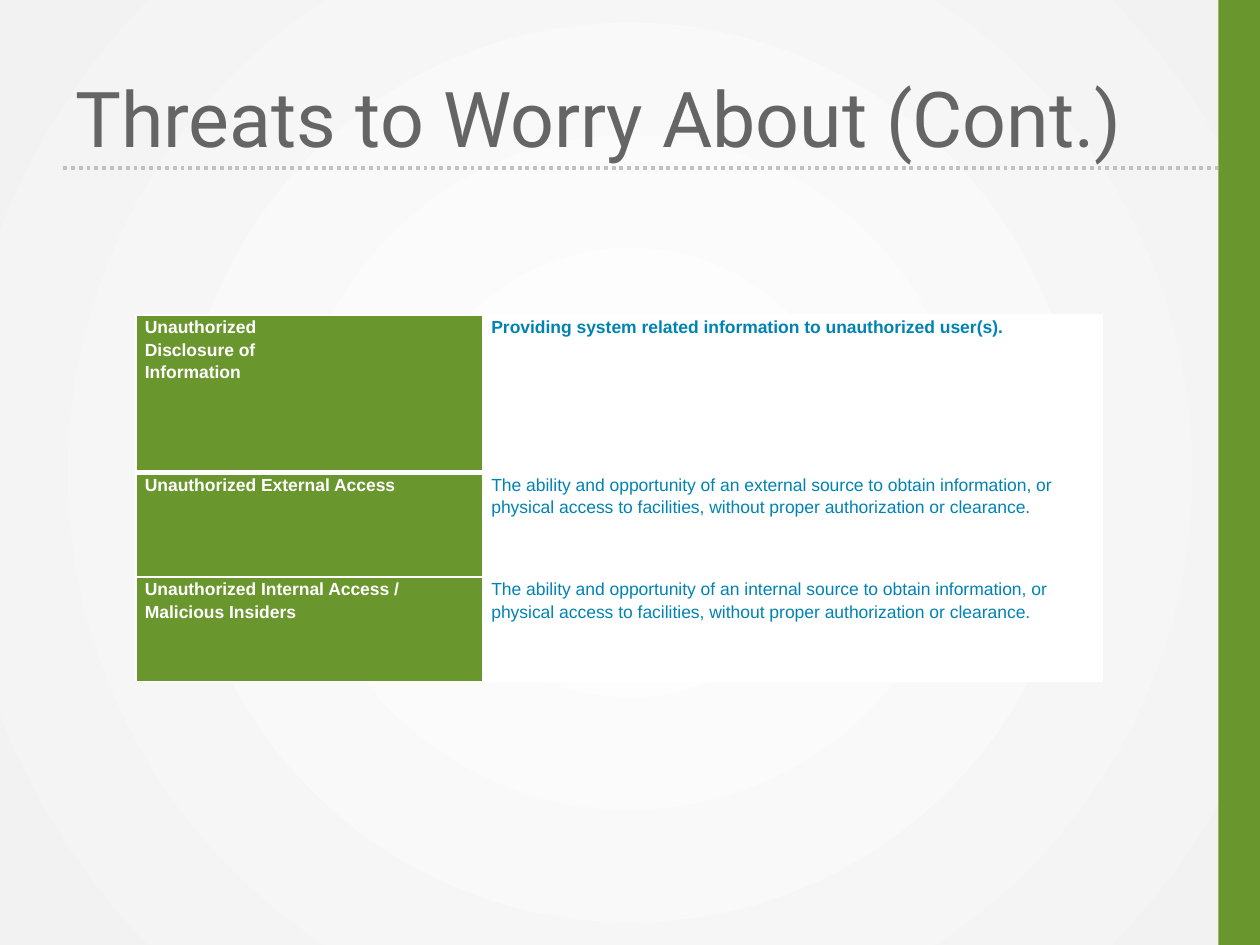
from lxml.etree import SubElement
from pptx import Presentation
from pptx.dml.color import RGBColor
from pptx.enum.dml import MSO_LINE
from pptx.enum.shapes import MSO_CONNECTOR, MSO_SHAPE
from pptx.enum.text import MSO_ANCHOR
from pptx.oxml.ns import qn
from pptx.util import Inches, Pt

COLORS = {
    "green": "6A972D",
    "blue": "0083B3",
    "white": "FFFFFF",
    "edge": "F2F2F2",
    "title": "656565",
    "rule": "C1C1C1",
}
COL_WIDTHS = [2.75, 4.92]
ROW_HEIGHTS = [1.25, 0.83, 0.83]
ACCESS = ("The ability and opportunity of an {} source to obtain information, or "
          "physical access to facilities, without proper authorization or clearance.")
THREATS = [
    ("Unauthorized\nDisclosure of\nInformation",
     "Providing system related information to unauthorized user(s)."),
    ("Unauthorized External Access", ACCESS.format("external")),
    ("Unauthorized Internal Access / Malicious Insiders", ACCESS.format("internal")),
]


def rgb(name):
    return RGBColor.from_string(COLORS[name])


def write(tf, text, color, line_spacing=None, **font):
    """Fill a text frame, one paragraph for each line of text."""
    tf.word_wrap = True
    for i, line in enumerate(text.split("\n")):
        p = tf.paragraphs[0] if i == 0 else tf.add_paragraph()
        p.line_spacing = line_spacing
        r = p.add_run()
        r.text = line
        r.font.color.rgb = rgb(color)
        for name, value in font.items():
            setattr(r.font, name, value)


def set_background(s):
    """Radial gradient, white in the middle."""
    fill = s.background.fill
    fill.gradient()
    for stop, color in zip(fill.gradient_stops, ("white", "edge")):
        stop.color.rgb = rgb(color)
    grad = s.element.find(".//" + qn("a:gradFill"))
    grad.remove(grad.find(qn("a:lin")))
    circle = SubElement(grad, qn("a:path"), path="circle")
    SubElement(circle, qn("a:fillToRect"), {side: "50000" for side in "ltrb"})


def add_rule(s):
    line = s.shapes.add_connector(MSO_CONNECTOR.STRAIGHT, Inches(0.5), Inches(1.33),
                                  Inches(9.67), Inches(1.33))
    line.line.color.rgb = rgb("rule")
    line.line.width = Pt(2.25)
    line.line.dash_style = MSO_LINE.ROUND_DOT
    SubElement(line._element.spPr, qn("a:effectLst"))


def add_side_bar(s):
    sp = s.shapes.add_shape(MSO_SHAPE.RECTANGLE, Inches(9.67), 0, Inches(0.33), Inches(7.5))
    sp.shadow.inherit = False
    sp.fill.solid()
    sp.fill.fore_color.rgb = rgb("green")
    sp.line.fill.background()


def add_title(s, text):
    tf = s.shapes.add_textbox(Inches(0.5), Inches(0.3), Inches(9), Inches(1.25)).text_frame
    tf.vertical_anchor = MSO_ANCHOR.MIDDLE
    write(tf, text, "title", size=Pt(44), name="Roboto")


def set_borders(cell, **widths):
    """White cell borders, with widths in points by side."""
    tc_pr = cell._tc.get_or_add_tcPr()
    for side in "LRTB":
        ln = SubElement(tc_pr, qn("a:ln" + side), w=str(Pt(widths[side])))
        fill = SubElement(ln, qn("a:solidFill"))
        SubElement(fill, qn("a:srgbClr"), val=COLORS["white"])


def format_cell(cell, text, row, col):
    margins = {"margin_left": 0.07, "margin_right": 0.07, "margin_top": 0, "margin_bottom": 0}
    for name, value in margins.items():
        setattr(cell, name, Inches(value))
    set_borders(cell, L=1, R=1, T=3 if row == 1 else 1, B=3 if row == 0 else 1)
    cell.fill.solid()
    cell.fill.fore_color.rgb = rgb("white" if col else "green")
    write(cell.text_frame, text, "blue" if col else "white", line_spacing=1.15,
          size=Pt(10), name="Arial", bold=row == 0 or col == 0)


def add_threat_table(s):
    table = s.shapes.add_table(len(THREATS), len(COL_WIDTHS), Inches(1.08), Inches(2.5),
                               Inches(sum(COL_WIDTHS)), Inches(sum(ROW_HEIGHTS))).table
    table.first_row = table.horz_banding = False
    for column, width in zip(table.columns, COL_WIDTHS):
        column.width = Inches(width)
    for row, height in zip(table.rows, ROW_HEIGHTS):
        row.height = Inches(height)
    for i, texts in enumerate(THREATS):
        for j, text in enumerate(texts):
            format_cell(table.cell(i, j), text, i, j)


def main():
    prs = Presentation()
    prs.slide_width, prs.slide_height = Inches(10), Inches(7.5)
    s = prs.slides.add_slide(prs.slide_layouts[6])
    set_background(s)
    add_rule(s)
    add_side_bar(s)
    add_title(s, "Threats to Worry About (Cont.)")
    add_threat_table(s)
    prs.save("out.pptx")


if __name__ == "__main__":
    main()
